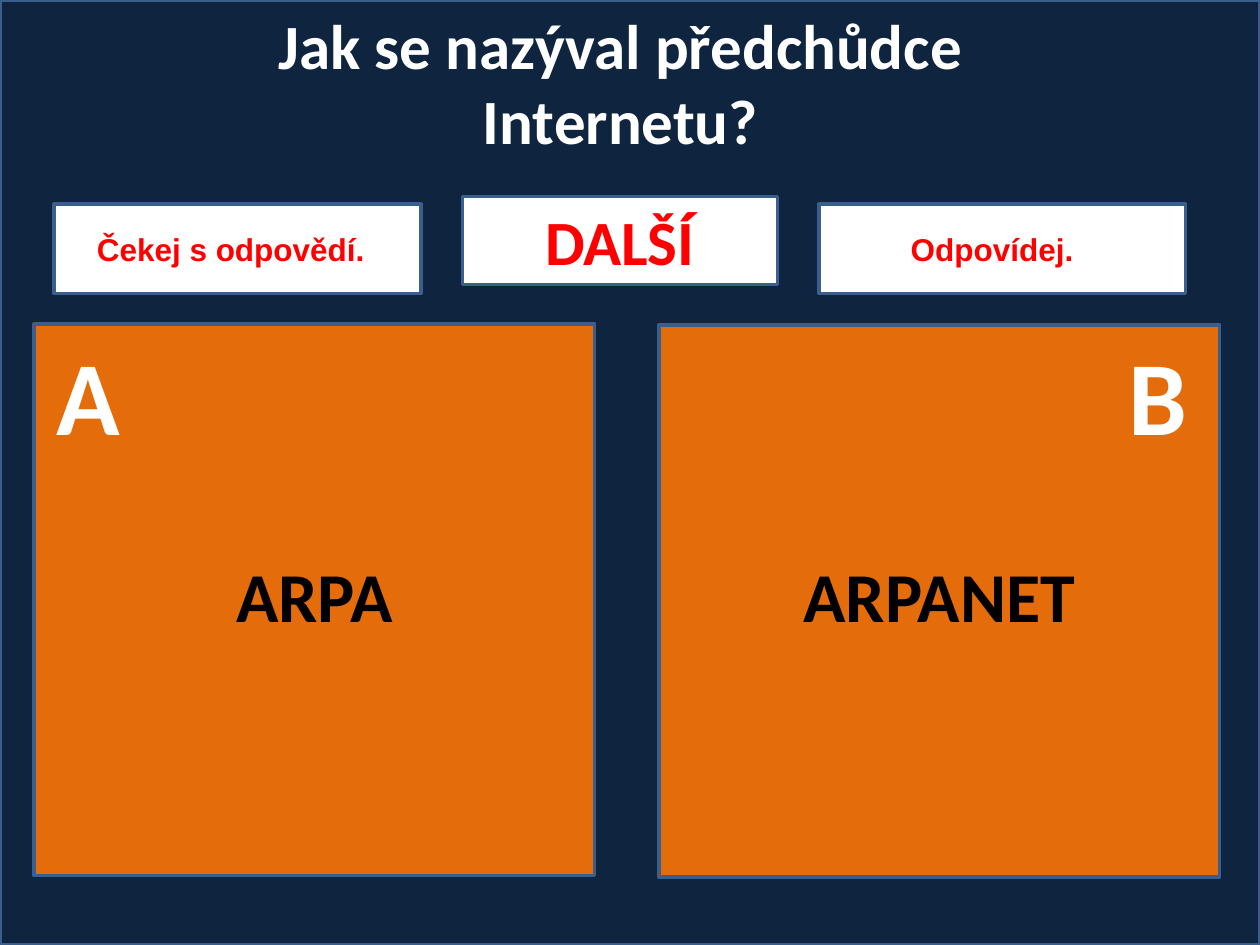
from dataclasses import dataclass

from pptx import Presentation
from pptx.dml.color import RGBColor
from pptx.enum.shapes import MSO_SHAPE as Preset
from pptx.enum.text import MSO_ANCHOR as Anchor, PP_ALIGN as Align
from pptx.slide import Slide
from pptx.util import Inches, Pt

NAVY = RGBColor(0x0F, 0x24, 0x3E)
BLUE = RGBColor(0x3A, 0x5F, 0x8C)
ORANGE = RGBColor(0xE4, 0x6C, 0x0A)
WHITE = RGBColor(0xFF, 0xFF, 0xFF)
BLACK = RGBColor(0x00, 0x00, 0x00)
RED = RGBColor(0xFF, 0x00, 0x00)


@dataclass(frozen=True)
class Box:
    left: float
    top: float
    width: float
    height: float

    def lengths(self) -> list[Inches]:
        return [Inches(n) for n in (self.left, self.top, self.width, self.height)]


@dataclass(frozen=True)
class Panel:
    box: Box
    fill: RGBColor
    preset: Preset = Preset.RECTANGLE


@dataclass(frozen=True)
class Label:
    text: str
    box: Box
    size: int
    color: RGBColor
    align: Align = Align.LEFT
    font: str = "Calibri"
    anchor: Anchor = Anchor.TOP
    margin_x: float = 0.1
    margin_y: float = 0.05


def draw_panel(slide: Slide, panel: Panel) -> None:
    shape = slide.shapes.add_shape(panel.preset, *panel.box.lengths())
    shape.shadow.inherit = False
    shape.fill.solid()
    shape.fill.fore_color.rgb = panel.fill
    shape.line.color.rgb = BLUE
    shape.line.width = Pt(2)


def draw_label(slide: Slide, label: Label) -> None:
    frame = slide.shapes.add_textbox(*label.box.lengths()).text_frame
    frame.word_wrap = True
    frame.vertical_anchor = label.anchor
    frame.margin_left = frame.margin_right = Inches(label.margin_x)
    frame.margin_top = frame.margin_bottom = Inches(label.margin_y)
    paragraph = frame.paragraphs[0]
    paragraph.text = label.text
    paragraph.alignment = label.align
    paragraph.font.name = label.font
    paragraph.font.size = Pt(label.size)
    paragraph.font.bold = True
    paragraph.font.color.rgb = label.color


def draw_answer(slide: Slide, letter: str, text: str, box: Box, letter_left: float) -> None:
    draw_panel(slide, Panel(box, ORANGE, Preset.ACTION_BUTTON_CUSTOM))
    draw_label(slide, Label(text, Box(box.left, 4.38, box.width, 0.67), 40, BLACK,
                            Align.CENTER, anchor=Anchor.MIDDLE, margin_x=0, margin_y=0))
    draw_label(slide, Label(letter, Box(letter_left, 2.57, 0.86, 1.11), 60, WHITE))


def draw_hint(slide: Slide, text: str, left: float, text_left: float, text_width: float) -> None:
    draw_panel(slide, Panel(Box(left, 1.62, 2.91, 0.71), WHITE))
    draw_label(slide, Label(text, Box(text_left, 1.78, text_width, 0.4), 18, RED, font="Arial"))


def main() -> None:
    presentation = Presentation()
    presentation.slide_width = Inches(10)
    presentation.slide_height = Inches(7.5)
    slide = presentation.slides.add_slide(presentation.slide_layouts[6])

    draw_panel(slide, Panel(Box(0, 0, 10, 7.5), NAVY))
    draw_label(slide, Label("Jak se nazýval předchůdce Internetu?", Box(1.41, 0, 7.03, 1.31),
                            36, WHITE, Align.CENTER))

    draw_answer(slide, "A", "ARPA", Box(0.27, 2.57, 4.45, 4.38), 0.35)
    draw_answer(slide, "B", "ARPANET", Box(5.23, 2.58, 4.45, 4.38), 8.86)

    next_box = Box(3.67, 1.56, 2.5, 0.7)
    draw_panel(slide, Panel(next_box, WHITE, Preset.FLOWCHART_PROCESS))
    draw_label(slide, Label("DALŠÍ", next_box, 36, RED, Align.CENTER))

    draw_hint(slide, "Čekej s odpovědí.", 0.43, 0.67, 2.52)
    draw_hint(slide, "Odpovídej.", 6.5, 7.13, 2.13)

    presentation.save("out.pptx")


if __name__ == "__main__":
    main()
